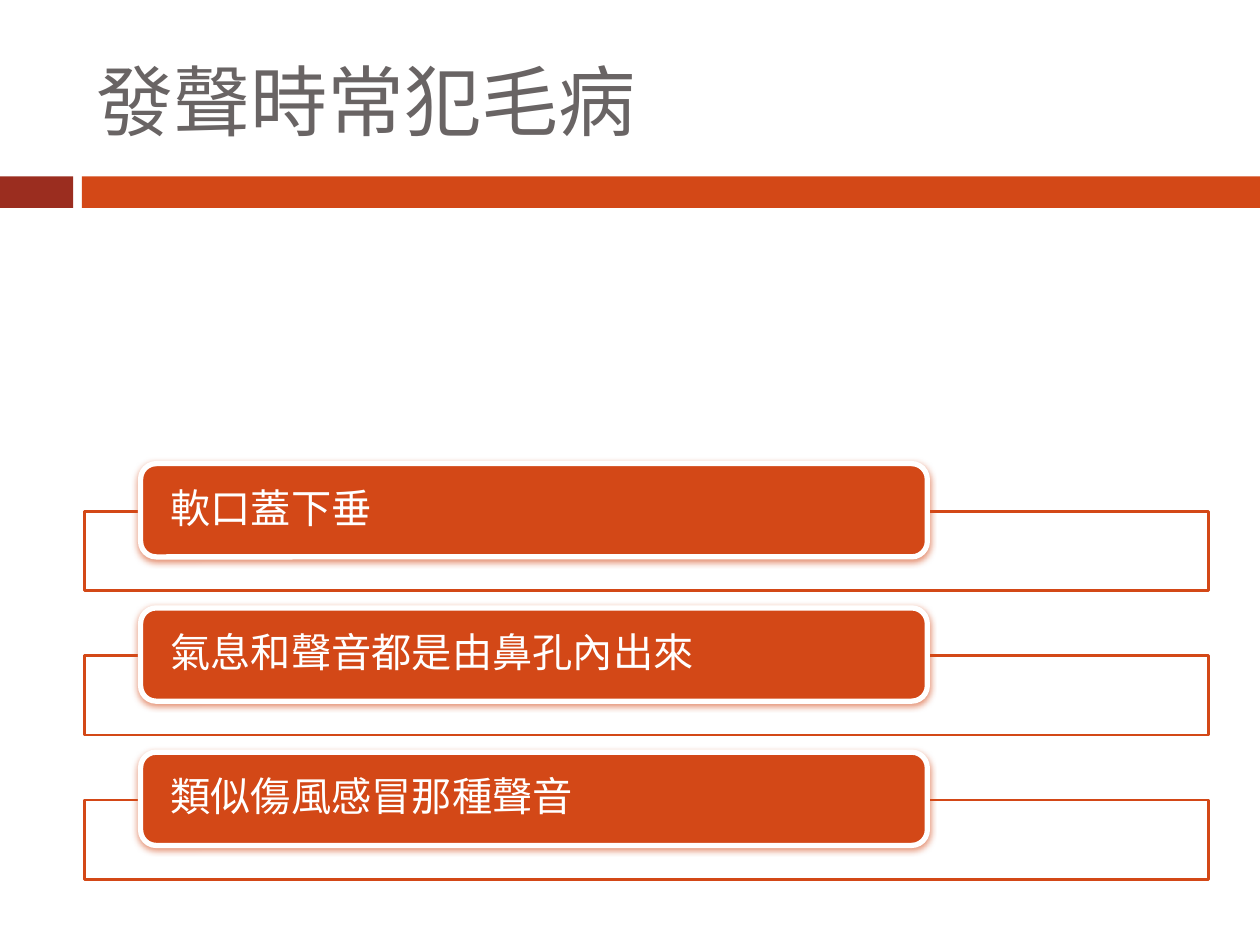
import pptx
import pptx.util
import pptx.dml.color
import pptx.enum.shapes
import pptx.enum.text
import pptx.oxml
import pptx.oxml.ns
import lxml.etree

TITLE = "發聲時常犯毛病"
FAULTS = ["軟口蓋下垂", "氣息和聲音都是由鼻孔內出來", "類似傷風感冒那種聲音"]
COLORS = {"accent": "D34817", "dark": "9B2D1F", "title": "696464", "white": "FFFFFF"}
FONT = "Calibri"

WIDTH, HEIGHT = 10, 7.5
LEFT, CONTENT_W = 0.67, 8.92
BAND_TOP, BAND_H = 1.4, 0.25
FIRST_LABEL_TOP, ROW_STEP = 3.68, 1.145
LABEL_H, FRAME_H = 0.74, 0.63
LABEL_INDENT = CONTENT_W * 0.05
LABEL_W = CONTENT_W * 0.7
FRAME_DROP = LABEL_H / 2 + 0.01

SHAPES = pptx.enum.shapes.MSO_SHAPE
Inches, Pt = pptx.util.Inches, pptx.util.Pt


def rgb(name):
    return pptx.dml.color.RGBColor.from_string(COLORS[name])


def add_box(s, kind, box, fill, line=None, line_width=0):
    sp = s.shapes.add_shape(kind, *map(Inches, box))
    sp.shadow.inherit = False
    sp.fill.solid()
    sp.fill.fore_color.rgb = rgb(fill)
    if line:
        sp.line.color.rgb = rgb(line)
        sp.line.width = Pt(line_width)
    else:
        sp.line.fill.background()
    return sp


def write(sp, text, size, color, inset=0.1, line_spacing=None, space_after=None):
    tf = sp.text_frame
    tf.word_wrap = True
    tf.vertical_anchor = pptx.enum.text.MSO_ANCHOR.MIDDLE
    tf.margin_left = tf.margin_right = Inches(inset)
    tf.margin_top = tf.margin_bottom = 0
    p = tf.paragraphs[0]
    p.alignment = pptx.enum.text.PP_ALIGN.LEFT
    p.line_spacing = line_spacing
    p.space_after = space_after
    r = p.add_run()
    r.text = text
    r.font.name = FONT
    r.font.size = Pt(size)
    r.font.color.rgb = rgb(color)


def set_alpha(sp, percent):
    color = sp.fill._xPr.find(".//" + pptx.oxml.ns.qn("a:srgbClr"))
    alpha = lxml.etree.SubElement(color, pptx.oxml.ns.qn("a:alpha"))
    alpha.set("val", str(percent * 1000))


def add_soft_shadow(sp):
    effects = sp._element.spPr.find(pptx.oxml.ns.qn("a:effectLst"))
    effects.append(pptx.oxml.parse_xml(
        f'<a:outerShdw {pptx.oxml.ns.nsdecls("a")} blurRad="50800" dist="12700" '
        f'dir="5400000" algn="ctr" rotWithShape="0"><a:srgbClr val="{COLORS["accent"]}">'
        '<a:alpha val="60000"/></a:srgbClr></a:outerShdw>'))


def add_fault(s, row, text):
    top = FIRST_LABEL_TOP + row * ROW_STEP
    frame = add_box(s, SHAPES.RECTANGLE, (LEFT, top + FRAME_DROP, CONTENT_W, FRAME_H),
                    "white", "accent", 1.5)
    set_alpha(frame, 90)
    label = add_box(s, SHAPES.ROUNDED_RECTANGLE,
                    (LEFT + LABEL_INDENT, top, LABEL_W, LABEL_H), "accent", "white", 3)
    add_soft_shadow(label)
    write(label, text, 23, "white", inset=0.2, line_spacing=0.9, space_after=Pt(8))


def main():
    prs = pptx.Presentation()
    prs.slide_width, prs.slide_height = Inches(WIDTH), Inches(HEIGHT)
    s = prs.slides.add_slide(prs.slide_layouts[6])
    add_box(s, SHAPES.RECTANGLE, (0, BAND_TOP, 0.58, BAND_H), "dark")
    add_box(s, SHAPES.RECTANGLE, (0.65, BAND_TOP, WIDTH - 0.65, BAND_H), "accent")
    title = s.shapes.add_textbox(*map(Inches, (LEFT, 0.25, CONTENT_W, 1.08)))
    write(title, TITLE, 44, "title")
    for row, text in enumerate(FAULTS):
        add_fault(s, row, text)
    prs.save("out.pptx")


if __name__ == "__main__":
    main()
